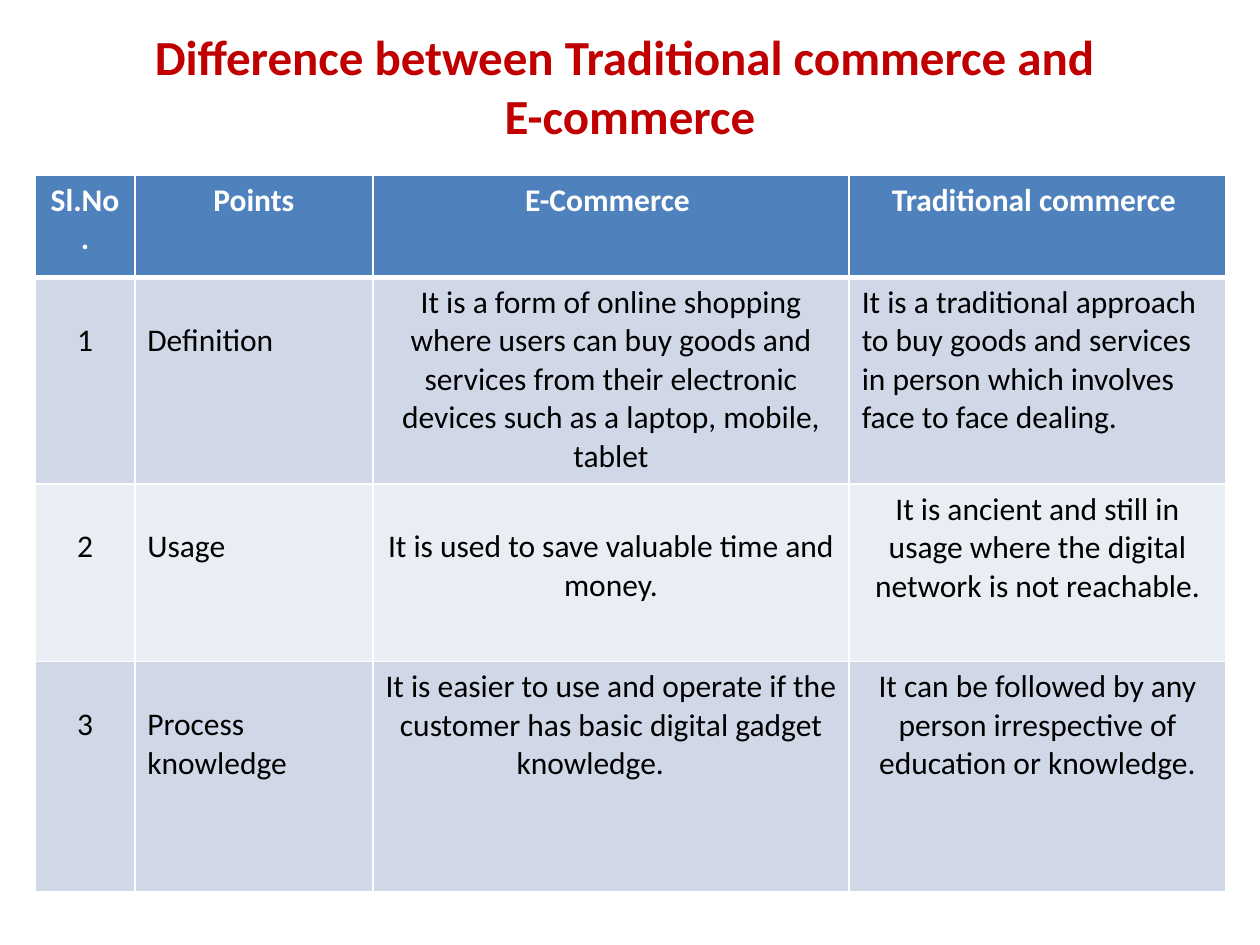
from dataclasses import dataclass

from lxml.etree import SubElement
from pptx import Presentation
from pptx.dml.color import RGBColor as RGB
from pptx.enum.text import MSO_ANCHOR as Anchor, PP_ALIGN as Align
from pptx.oxml.ns import qn
from pptx.util import Inches, Pt


@dataclass(frozen=True)
class Theme:
    font: str = "Calibri"
    title: str = "C00000"
    head: str = "4F81BD"
    bands: tuple = ("D0D8E8", "E9EDF4")
    ink: str = "000000"
    white: str = "FFFFFF"
    big: int = 28
    body: int = 18
    thin: int = 1
    thick: int = 3


COLS = (0.79, 1.89, 3.78, 2.99)
HEIGHTS = (0.81, 1.64, 1.41, 1.83)
HEAD = ("Sl.No.", "Points", "E-Commerce ", "Traditional commerce ")
ROWS = (
    ("1", "Definition",
     "It is a form of online shopping where users can buy goods and services "
     "from their electronic devices such as a laptop, mobile, tablet",
     "It is a traditional approach to buy goods and services in person "
     "which involves face to face dealing."),
    ("2", "Usage",
     "It is used to save valuable time and money.",
     "It is ancient and still in usage where the digital network is not reachable."),
    ("3", "Process knowledge",
     "It is easier to use and operate if the customer has basic digital "
     "gadget knowledge.\t",
     "It can be followed by any person irrespective of education or knowledge."),
)
LEFT = {(1, 1), (2, 1), (3, 1), (1, 3)}
# Cells whose text starts one line lower
LOW = {(row, col) for row in (1, 2, 3) for col in (0, 1)} | {(2, 2)}


class Deck:
    def __init__(self, theme):
        self.theme = theme
        self.prs = Presentation()
        self.prs.slide_width, self.prs.slide_height = Inches(10), Inches(7.5)
        self.slide = self.prs.slides.add_slide(self.prs.slide_layouts[6])

    def label(self, frame, text, size, color, bold, align):
        para = frame.paragraphs[0]
        para.text = text
        para.alignment = align
        for run in para.runs:
            font = run.font
            font.name, font.size, font.bold = self.theme.font, Pt(size), bold
            font.color.rgb = RGB.from_string(color)

    def title(self, text, *box):
        frame = self.slide.shapes.add_textbox(*map(Inches, box)).text_frame
        frame.word_wrap = True
        frame.vertical_anchor = Anchor.MIDDLE
        self.label(frame, text, self.theme.big, self.theme.title, True, Align.CENTER)

    def edge(self, cell, base):
        """Draw white borders, with the given width at the bottom."""
        props = cell._tc.get_or_add_tcPr()
        sides = zip("LRTB", (self.theme.thin,) * 3 + (base,))
        for spot, (side, width) in enumerate(sides):
            line = SubElement(props, qn(f"a:ln{side}"), w=str(Pt(width)))
            fill = SubElement(line, qn("a:solidFill"))
            SubElement(fill, qn("a:srgbClr"), val=self.theme.white)
            props.insert(spot, line)

    def cell(self, cell, row, col, text):
        look = self.theme
        top = row == 0
        cell.fill.solid()
        shade = look.head if top else look.bands[(row - 1) % 2]
        cell.fill.fore_color.rgb = RGB.from_string(shade)
        cell.margin_top = Inches(0.35 if (row, col) in LOW else 0.05)
        align = Align.LEFT if (row, col) in LEFT else Align.CENTER
        self.label(cell.text_frame, text, look.body,
                   look.white if top else look.ink, top, align)
        self.edge(cell, look.thick if top else look.thin)

    def table(self, rows, left, top):
        size = left, top, sum(COLS), sum(HEIGHTS)
        grid = self.slide.shapes.add_table(
            len(rows), len(COLS), *map(Inches, size)).table
        for col, width in zip(grid.columns, COLS):
            col.width = Inches(width)
        for line, height in zip(grid.rows, HEIGHTS):
            line.height = Inches(height)
        for row, texts in enumerate(rows):
            for col, text in enumerate(texts):
                self.cell(grid.cell(row, col), row, col, text)


def main():
    deck = Deck(Theme())
    deck.title("Difference between Traditional commerce and \vE-commerce",
               0.5, 0.13, 9, 1.1)
    deck.table((HEAD, *ROWS), 0.28, 1.39)
    deck.prs.save("out.pptx")


if __name__ == "__main__":
    main()
